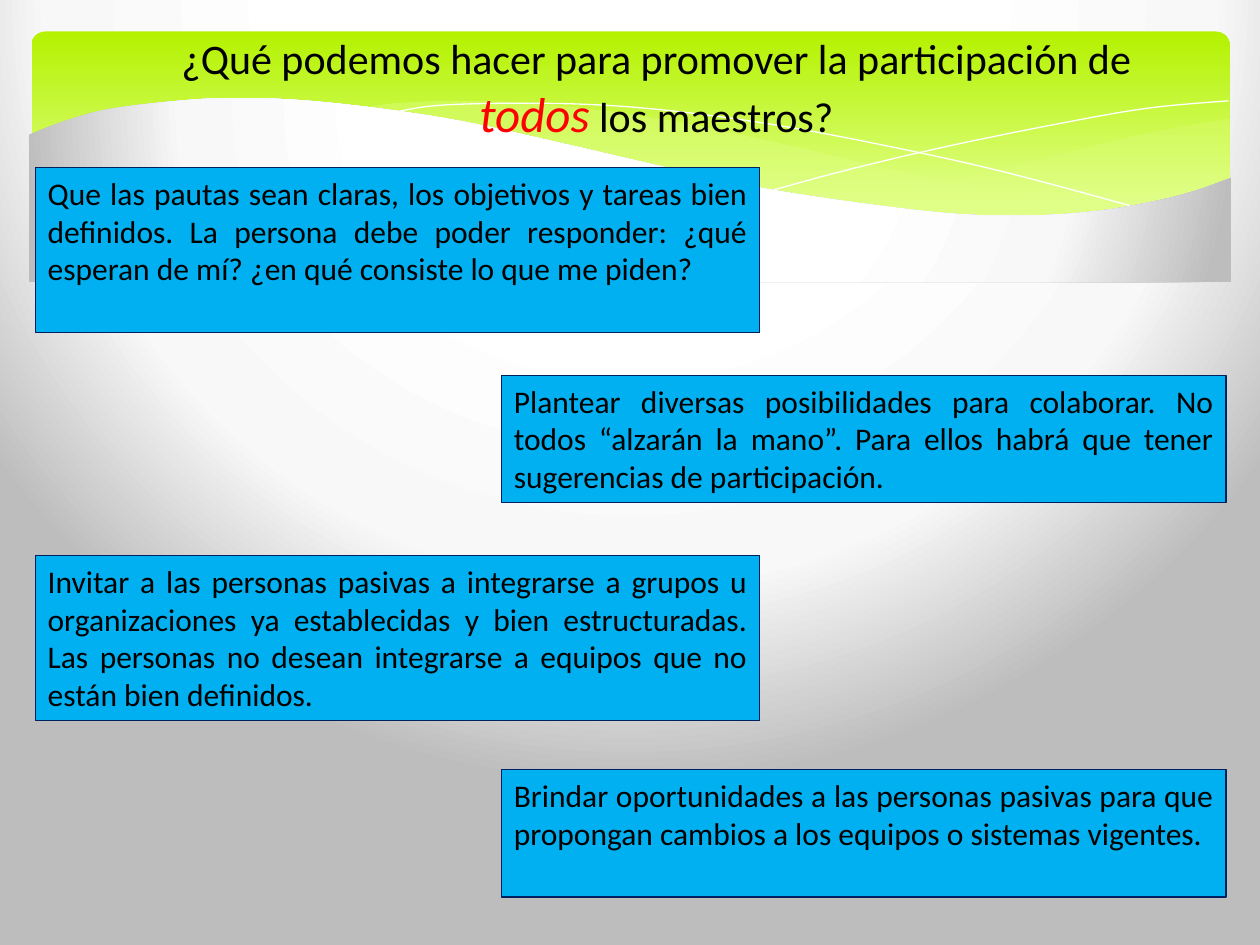
from lxml.etree import SubElement
from pptx import Presentation
from pptx.dml.color import RGBColor
from pptx.enum.shapes import MSO_SHAPE
from pptx.enum.text import MSO_ANCHOR, MSO_AUTO_SIZE, PP_ALIGN
from pptx.oxml.ns import qn
from pptx.util import Inches, Pt

COLORS = {"black": "000000", "red": "FF0000", "white": "FFFFFF", "box": "00B0F0",
          "edge": "002060", "wave": "DFFF82"}
BAND = [(0, "B4F200"), (90, "E2FF8E")]
GLOW = [(40, "FFFFFF"), (74, "F8F8F8"), (100, "BDBDBD")]
STEPS = 6


def bend(knots):
    """Return points on a smooth Catmull-Rom curve through the knots."""
    ends = [knots[0], *knots, knots[-1]]
    curve = []
    for a, b, c, d in zip(ends, ends[1:], ends[2:], ends[3:]):
        for step in range(STEPS):
            t = step / STEPS
            curve.append(tuple(
                (2 * q + (r - p) * t + (2 * p - 5 * q + 4 * r - s) * t ** 2
                 + (3 * q - p - 3 * r + s) * t ** 3) / 2
                for p, q, r, s in zip(a, b, c, d)))
    return curve + [knots[-1]]


def shade(root, stops, round_=False):
    """Refill the first gradient under root, downwards or as a circle."""
    grad = root.find(".//" + qn("a:gradFill"))
    for child in list(grad):
        grad.remove(child)
    grad.set("rotWithShape", "1")
    items = SubElement(grad, qn("a:gsLst"))
    for place, color in stops:
        stop = SubElement(items, qn("a:gs"), pos=str(place * 1000))
        SubElement(stop, qn("a:srgbClr"), val=color)
    if round_:
        way = SubElement(grad, qn("a:path"), {"path": "circle"})
        SubElement(way, qn("a:fillToRect"), l="20000", t="-40000", r="20000", b="140000")
    else:
        SubElement(grad, qn("a:lin"), ang="5400000", scaled="0")


class Deck:
    def __init__(self, slide):
        self.slide = slide
        self.font = {"name": "Calibri", "size": Pt(18), "italic": False}

    def ground(self):
        self.slide.background.fill.gradient()
        shade(self.slide.element, GLOW, round_=True)

    def paint(self, fill, color):
        fill.solid()
        fill.fore_color.rgb = RGBColor.from_string(COLORS[color])

    def rect(self, kind, left, top, width, height):
        shape = self.slide.shapes.add_shape(
            kind, Inches(left), Inches(top), Inches(width), Inches(height))
        shape.shadow.inherit = False
        return shape

    def band(self, *place):
        shape = self.rect(MSO_SHAPE.ROUNDED_RECTANGLE, *place)
        shape.adjustments[0] = 0.07
        shape.line.fill.background()
        shape.fill.gradient()
        shade(shape.element, BAND)

    def outline(self, points, close):
        spots = [(Inches(x), Inches(y)) for x, y in points]
        pen = self.slide.shapes.build_freeform(*spots[0])
        pen.add_line_segments(spots[1:], close=close)
        shape = pen.convert_to_shape()
        shape.shadow.inherit = False
        return shape

    def wave(self, points, alpha=None):
        """Draw a filled wave: see-through green, or the background glow."""
        shape = self.outline(points, True)
        shape.line.fill.background()
        if alpha is None:
            shape.fill.gradient()
            shade(shape.element, GLOW, round_=True)
        else:
            self.paint(shape.fill, "wave")
            tint = shape.element.spPr.find(".//" + qn("a:srgbClr"))
            SubElement(tint, qn("a:alpha"), val=str(alpha * 1000))

    def thread(self, points):
        shape = self.outline(points, False)
        shape.fill.background()
        self.paint(shape.line.fill, "white")
        shape.line.width = Pt(0)

    def label(self, shape, align, runs):
        frame = shape.text_frame
        form = {"word_wrap": True, "auto_size": MSO_AUTO_SIZE.SHAPE_TO_FIT_TEXT,
                "vertical_anchor": MSO_ANCHOR.TOP}
        for key, value in form.items():
            setattr(frame, key, value)
        line = frame.paragraphs[0]
        line.alignment = align
        for text, color, extra in runs:
            run = line.add_run()
            run.text = text
            for key, value in {**self.font, **extra}.items():
                setattr(run.font, key, value)
            self.paint(run.font.fill, color)

    def title(self, left, top, width, height, runs):
        shape = self.slide.shapes.add_textbox(
            Inches(left), Inches(top), Inches(width), Inches(height))
        self.label(shape, PP_ALIGN.CENTER, runs)

    def box(self, left, top, width, height, text):
        shape = self.rect(MSO_SHAPE.RECTANGLE, left, top, width, height)
        self.paint(shape.fill, "box")
        self.paint(shape.line.fill, "edge")
        shape.line.width = Pt(0.75)
        self.label(shape, PP_ALIGN.JUSTIFY, [(text, "black", {})])


RIGHT = [(9.76, 0.94), (9.35, 1.01), (8.91, 1.1), (8.32, 1.25), (7.53, 1.43), (6.61, 1.6)]
RIGHT_LOW = [(6.61, 1.6), (7.19, 1.67), (7.81, 1.72), (8.35, 1.72), (8.81, 1.67),
             (9.28, 1.58), (9.76, 1.41)]
LONG = [(8.93, 1.67), (8.07, 1.54), (7.06, 1.34), (6.29, 1.16), (5.55, 1), (4.89, 0.89),
        (4.2, 0.82), (3.61, 0.8), (3.13, 0.82), (2.86, 0.86)]
LONG_LOW = [(2.86, 0.86), (3.42, 0.94), (4.04, 1.06), (4.91, 1.26), (5.66, 1.43),
            (6.5, 1.58), (7.22, 1.68), (7.85, 1.72), (8.38, 1.72), (8.93, 1.67)]
FALL = [(3.09, 0.9), (3.44, 0.84), (4.01, 0.82), (4.69, 0.83), (5.33, 0.88), (6.08, 0.98),
        (6.95, 1.14), (7.95, 1.36), (9.07, 1.66)]
RISE = [(6.13, 1.51), (6.72, 1.35), (7.48, 1.17), (8.36, 0.99), (9.1, 0.86), (9.75, 0.8)]
FRONT = [(9.77, 1.41), (9.5, 1.51), (9.2, 1.59), (8.75, 1.67), (8.23, 1.71), (7.61, 1.7),
         (6.88, 1.62), (6.03, 1.49), (5.29, 1.33), (4.47, 1.14), (3.65, 0.96), (2.92, 0.85),
         (2.3, 0.79), (1.77, 0.78), (1.32, 0.81), (0.85, 0.87), (0.52, 0.96), (0.23, 1.07)]

TITLE = [
    ("¿Qué podemos hacer para promover la participación de ", "black", {"size": Pt(24)}),
    ("todos", "red", {"size": Pt(28), "italic": True}),
    (" los maestros?", "black", {"size": Pt(24)}),
]
LEFT, INSET, WIDTH = 0.28, 3.98, 5.75
TALL, SHORT = 1.31, 1.01
IDEAS = [
    (LEFT, 1.33, TALL, "Que las pautas sean claras, los objetivos y tareas bien definidos. "
     "La persona debe poder responder: ¿qué esperan de mí? "
     "¿en qué consiste lo que me piden?"),
    (INSET, 2.98, SHORT, "Plantear diversas posibilidades para colaborar. No todos "
     "“alzarán la mano”. Para ellos habrá que tener sugerencias de participación."),
    (LEFT, 4.41, TALL, "Invitar a las personas pasivas a integrarse a grupos u "
     "organizaciones ya establecidas y bien estructuradas. Las personas no desean "
     "integrarse a equipos que no están bien definidos."),
    (INSET, 6.11, SHORT, "Brindar oportunidades a las personas pasivas para que "
     "propongan cambios a los equipos o sistemas vigentes."),
]


def main():
    show = Presentation()
    show.slide_width, show.slide_height = Inches(10), Inches(7.5)
    deck = Deck(show.slides.add_slide(show.slide_layouts[6]))
    deck.ground()
    deck.band(0.25, 0.25, 9.51, 1.56)
    deck.wave(bend(RIGHT) + bend(RIGHT_LOW), alpha=29)
    deck.wave(bend(LONG) + bend(LONG_LOW), alpha=40)
    for knots in (FALL, RISE):
        deck.thread(bend(knots))
    deck.wave(bend(FRONT) + [(0.23, 2.24), (9.77, 2.24)])
    deck.title(1.06, 0.21, 8.3, 0.98, TITLE)
    for left, top, height, text in IDEAS:
        deck.box(left, top, WIDTH, height, text)
    show.save("out.pptx")


if __name__ == "__main__":
    main()
